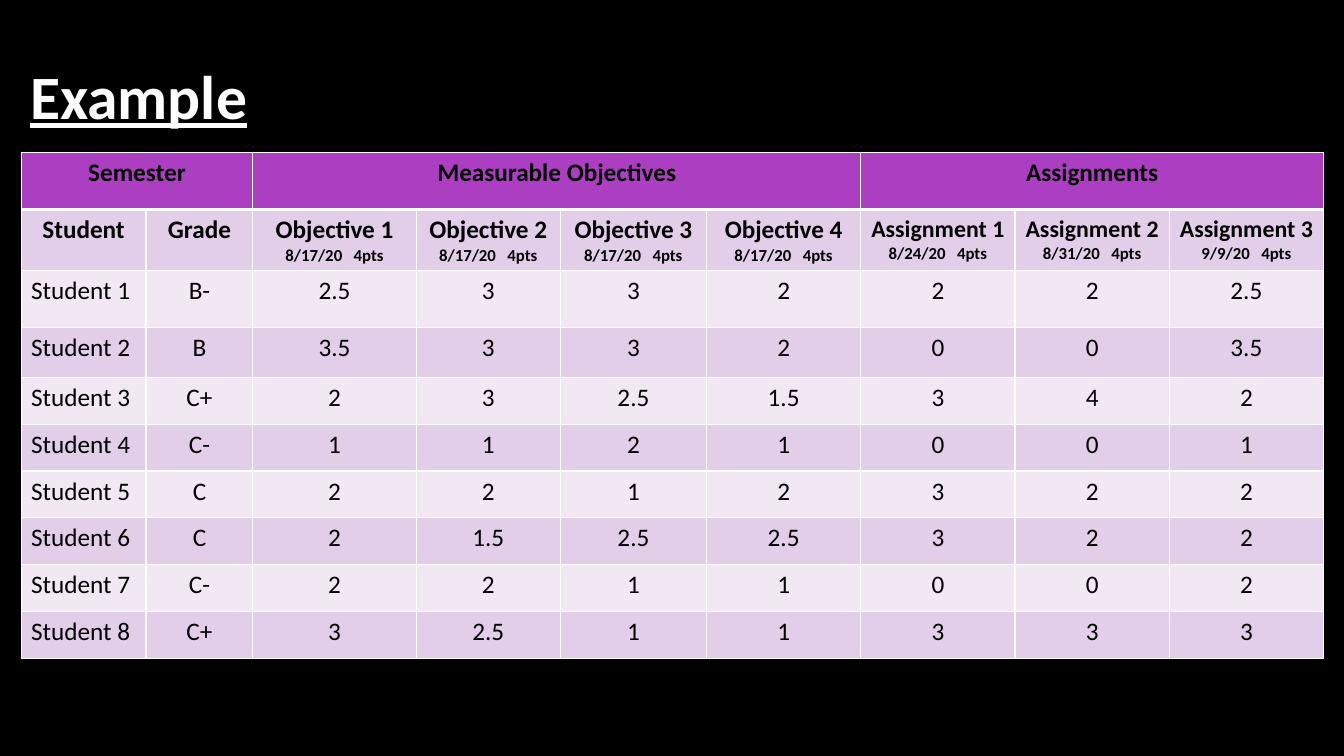
from lxml import etree
from pptx import Presentation, util as u
from pptx.dml.color import RGBColor
from pptx.enum import text
from pptx.oxml.ns import qn

GAP = "   "
GROUPS = [("Semester", 2), ("Measurable Objectives", 4), ("Assignments", 3)]
HEADINGS = (
    [("Student", None), ("Grade", None)]
    + [(f"Objective {number}", "8/17/20") for number in range(1, 5)]
    + [("Assignment 1", "8/24/20"), ("Assignment 2", "8/31/20"), ("Assignment 3", "9/9/20")]
)
GRADES = [
    ["B-", "2.5", "3", "3", "2", "2", "2", "2.5"],
    ["B", "3.5", "3", "3", "2", "0", "0", "3.5"],
    ["C+", "2", "3", "2.5", "1.5", "3", "4", "2"],
    ["C-", "1", "1", "2", "1", "0", "0", "1"],
    ["C", "2", "2", "1", "2", "3", "2", "2"],
    ["C", "2", "1.5", "2.5", "2.5", "3", "2", "2"],
    ["C-", "2", "2", "1", "1", "0", "0", "2"],
    ["C+", "3", "2.5", "1", "1", "3", "3", "3"],
]
# Percent of the slide's width and height
COLUMN_WIDTHS = [9.3, 7.95, 12.15, 10.73, 10.88] + [11.48] * 4
ROW_HEIGHTS = [7.6] * 3 + [6.6] + [6.19] * 6


def colour(value):
    return RGBColor.from_string(value)


class GradeSlide:
    font = "Calibri"
    black, white = "000000", "FFFFFF"
    purple, lilac, pale = "AC3EC1", "E3CEE9", "F1E8F4"

    def __init__(self, deck):
        self.deck = deck
        self.page = deck.slides.add_slide(deck.slide_layouts[6])
        fill = self.page.background.fill
        fill.solid()
        fill.fore_color.rgb = colour(self.black)

    def across(self, percent):
        return round(self.deck.slide_width * percent / 100)

    def down(self, percent):
        return round(self.deck.slide_height * percent / 100)

    def add_span(self, para, words, size, shade, bold=False, underline=False):
        span = para.add_run()
        span.text = words
        font = span.font
        font.name, font.size, font.bold = self.font, u.Pt(size), bold
        font.underline = underline
        font.color.rgb = colour(shade)

    def title(self, words, left, top, width, height):
        box = self.page.shapes.add_textbox(
            self.across(left), self.down(top), self.across(width), self.down(height))
        frame = box.text_frame
        frame.word_wrap = True
        frame.vertical_anchor = text.MSO_ANCHOR.MIDDLE
        self.add_span(frame.paragraphs[0], words, 44, self.white, bold=True, underline=True)

    def table(self, left, top, widths, heights):
        """Add an empty table whose columns and rows are shares of the slide."""
        grid = self.page.shapes.add_table(
            len(heights), len(widths), self.across(left), self.down(top),
            self.across(sum(widths)), self.down(sum(heights))).table
        for column, width in zip(grid.columns, widths):
            column.width = self.across(width)
        for row, height in zip(grid.rows, heights):
            row.height = self.down(height)
        return grid

    def paint(self, cell, shade, top=1, bottom=1):
        """Give a cell white borders, in points, and a fill."""
        properties = cell._tc.get_or_add_tcPr()
        for side, width in (("L", 1), ("R", 1), ("T", top), ("B", bottom)):
            line = etree.SubElement(properties, qn(f"a:ln{side}"), w=str(u.Pt(width)))
            solid = etree.SubElement(line, qn("a:solidFill"))
            etree.SubElement(solid, qn("a:srgbClr"), val=self.white)
        cell.fill.solid()
        cell.fill.fore_color.rgb = colour(shade)

    def fill_cell(self, cell, lines, bold=False, centred=True):
        """Put (words, size) lines in a cell, one paragraph each."""
        frame = cell.text_frame
        for index, (words, size) in enumerate(lines):
            para = frame.add_paragraph() if index else frame.paragraphs[0]
            para.alignment = text.PP_ALIGN.CENTER if centred else text.PP_ALIGN.LEFT
            self.add_span(para, words, size, self.black, bold)

    def gradebook(self, left, top):
        grid = self.table(left, top, COLUMN_WIDTHS, ROW_HEIGHTS)
        for index, row in enumerate(grid.rows):
            shade = self.purple if index == 0 else self.lilac if index % 2 else self.pale
            for cell in row.cells:
                self.paint(cell, shade, top=3 if index == 1 else 1, bottom=1 if index else 3)

        start = 0
        for name, span in GROUPS:
            grid.cell(0, start).merge(grid.cell(0, start + span - 1))
            self.fill_cell(grid.cell(0, start), [(name, 18)], bold=True)
            start += span

        for column, (name, date) in enumerate(HEADINGS):
            cell = grid.cell(1, column)
            cell.margin_left = cell.margin_right = u.Inches(0.08)
            lines = [(name, 17 if name.startswith("Assignment") else 18)]
            if date:
                lines.append((f"{date}{GAP}4pts", 12))
            self.fill_cell(cell, lines, bold=True)

        for number, grades in enumerate(GRADES, 1):
            for column, value in enumerate([f"Student {number}"] + grades):
                self.fill_cell(grid.cell(number + 1, column), [(value, 18)], centred=column > 0)


def main():
    deck = Presentation()
    deck.slide_width, deck.slide_height = u.Inches(13.33), u.Inches(7.5)
    slide = GradeSlide(deck)
    slide.title("Example", 1.5, 6.27, 94.6, 12.53)
    slide.gradebook(1.57, 20.13)
    deck.save("out.pptx")


if __name__ == "__main__":
    main()
